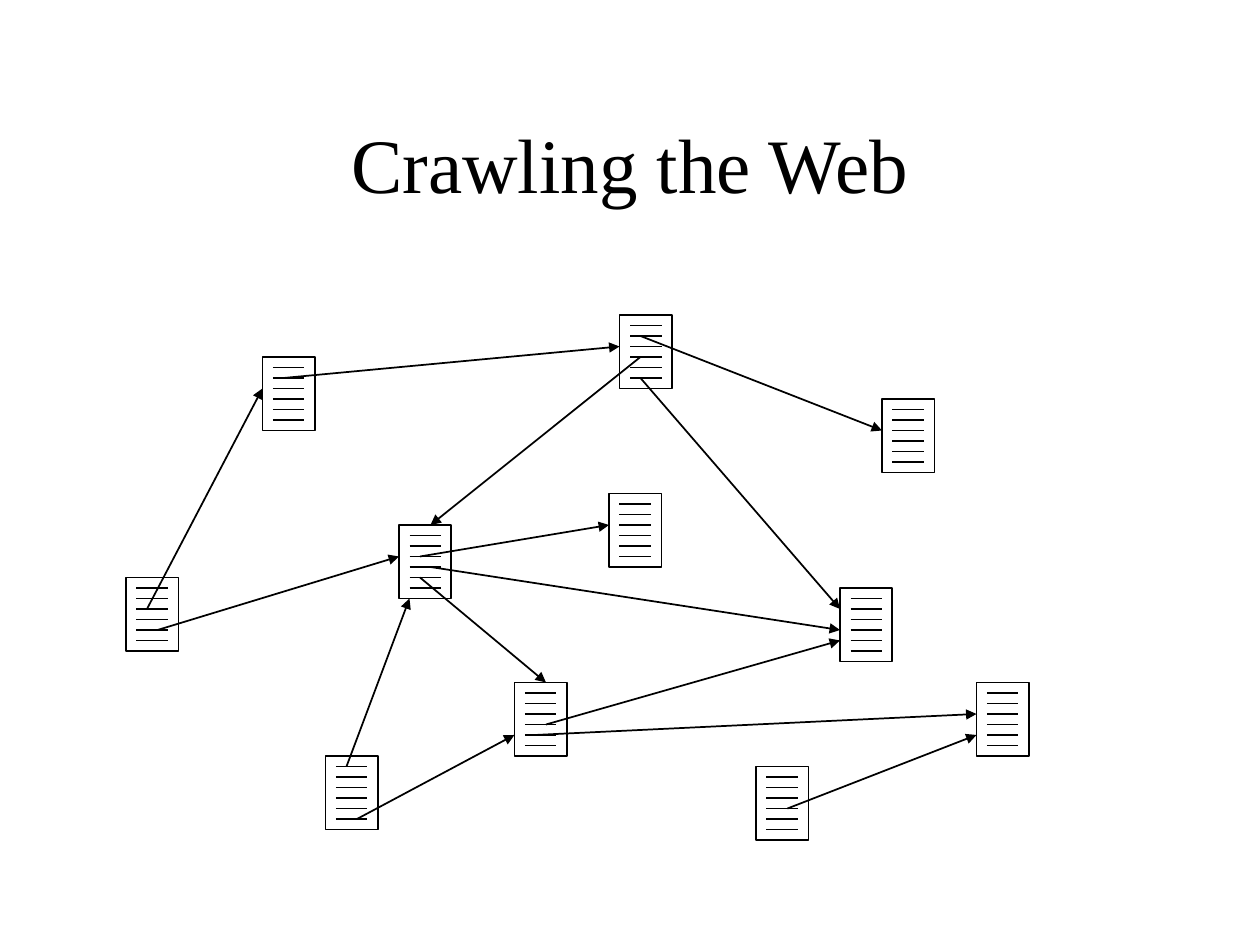
from dataclasses import dataclass

from lxml import etree
from pptx import Presentation
from pptx import util as u
from pptx.dml import color
from pptx.enum import shapes, text
from pptx.oxml import ns

EMU_PER_PX = 9525  # 96 px to the inch


@dataclass(frozen=True)
class Theme:
    ink: color.RGBColor = color.RGBColor(0, 0, 0)
    font: str = "Times New Roman"
    title_size: int = 44
    line_width: int = 1


@dataclass(frozen=True)
class WebPage:
    x: int
    y: int


@dataclass(frozen=True)
class Link:
    """An arrow from a text row of one page to a point on another page's edge."""
    source: str
    source_dx: int
    row: int
    target: str
    target_dx: int
    target_dy: int


THEME = Theme()
PAGE_WIDTH, PAGE_HEIGHT = 40, 56
ROW_COUNT, ROW_GAP, ROW_INDENT = 6, 8, 8

PAGES = {
    "west": WebPage(96, 440),
    "south west": WebPage(248, 576),
    "south": WebPage(576, 584),
    "north east": WebPage(672, 304),
    "centre": WebPage(464, 376),
    "north": WebPage(472, 240),
    "east": WebPage(640, 448),
    "north west": WebPage(200, 272),
    "hub": WebPage(304, 400),
    "lower": WebPage(392, 520),
    "south east": WebPage(744, 520),
}

LINKS = [
    Link("north", 16, 4, "hub", 24, 0),
    Link("north", 16, 6, "east", 0, 16),
    Link("north", 16, 2, "north east", 0, 24),
    Link("north west", 16, 2, "north", 0, 24),
    Link("hub", 16, 5, "lower", 24, 0),
    Link("hub", 16, 3, "centre", 0, 24),
    Link("hub", 24, 4, "east", 0, 32),
    Link("lower", 24, 4, "east", 0, 40),
    Link("lower", 16, 5, "south east", 0, 24),
    Link("west", 16, 3, "north west", 0, 24),
    Link("west", 24, 5, "hub", 0, 24),
    Link("south west", 24, 6, "lower", 0, 40),
    Link("south west", 16, 1, "hub", 8, 56),
    Link("south", 24, 4, "south east", 0, 40),
]


def px(length: int) -> u.Emu:
    return u.Emu(length * EMU_PER_PX)


def style_line(line) -> None:
    line.color.rgb = THEME.ink
    line.width = u.Pt(THEME.line_width)


def draw_line(slide, x1: int, y1: int, x2: int, y2: int, arrow: bool = False) -> None:
    connector = slide.shapes.add_connector(
        shapes.MSO_CONNECTOR.STRAIGHT, px(x1), px(y1), px(x2), px(y2))
    style_line(connector.line)
    properties = connector.element.spPr
    if arrow:
        outline = properties.find(ns.qn("a:ln"))
        etree.SubElement(outline, ns.qn("a:tailEnd"), type="triangle")
    etree.SubElement(properties, ns.qn("a:effectLst"))


def draw_page(slide, page: WebPage) -> None:
    box = slide.shapes.add_shape(
        shapes.MSO_SHAPE.RECTANGLE,
        px(page.x), px(page.y), px(PAGE_WIDTH), px(PAGE_HEIGHT))
    box.shadow.inherit = False
    box.fill.background()
    style_line(box.line)
    for row in range(1, ROW_COUNT + 1):
        y = page.y + row * ROW_GAP
        draw_line(slide, page.x + ROW_INDENT, y, page.x + PAGE_WIDTH - ROW_INDENT, y)


def draw_link(slide, link: Link) -> None:
    source, target = PAGES[link.source], PAGES[link.target]
    draw_line(slide,
              source.x + link.source_dx, source.y + link.row * ROW_GAP,
              target.x + link.target_dx, target.y + link.target_dy, arrow=True)


def draw_title(slide, wording: str) -> None:
    box = slide.shapes.add_textbox(px(72), px(64), px(816), px(120))
    frame = box.text_frame
    frame.word_wrap = True
    frame.vertical_anchor = text.MSO_ANCHOR.MIDDLE
    frame.text = wording
    para = frame.paragraphs[0]
    para.alignment = text.PP_ALIGN.CENTER
    span = para.runs[0]
    span.font.name = THEME.font
    span.font.size = u.Pt(THEME.title_size)
    span.font.color.rgb = THEME.ink


def main() -> None:
    deck = Presentation()
    deck.slide_width, deck.slide_height = px(960), px(720)
    slide = deck.slides.add_slide(deck.slide_layouts[6])

    # Title
    draw_title(slide, "Crawling the Web")

    # Web pages, then the links between them
    for page in PAGES.values():
        draw_page(slide, page)
    for link in LINKS:
        draw_link(slide, link)

    deck.save("out.pptx")


if __name__ == "__main__":
    main()
